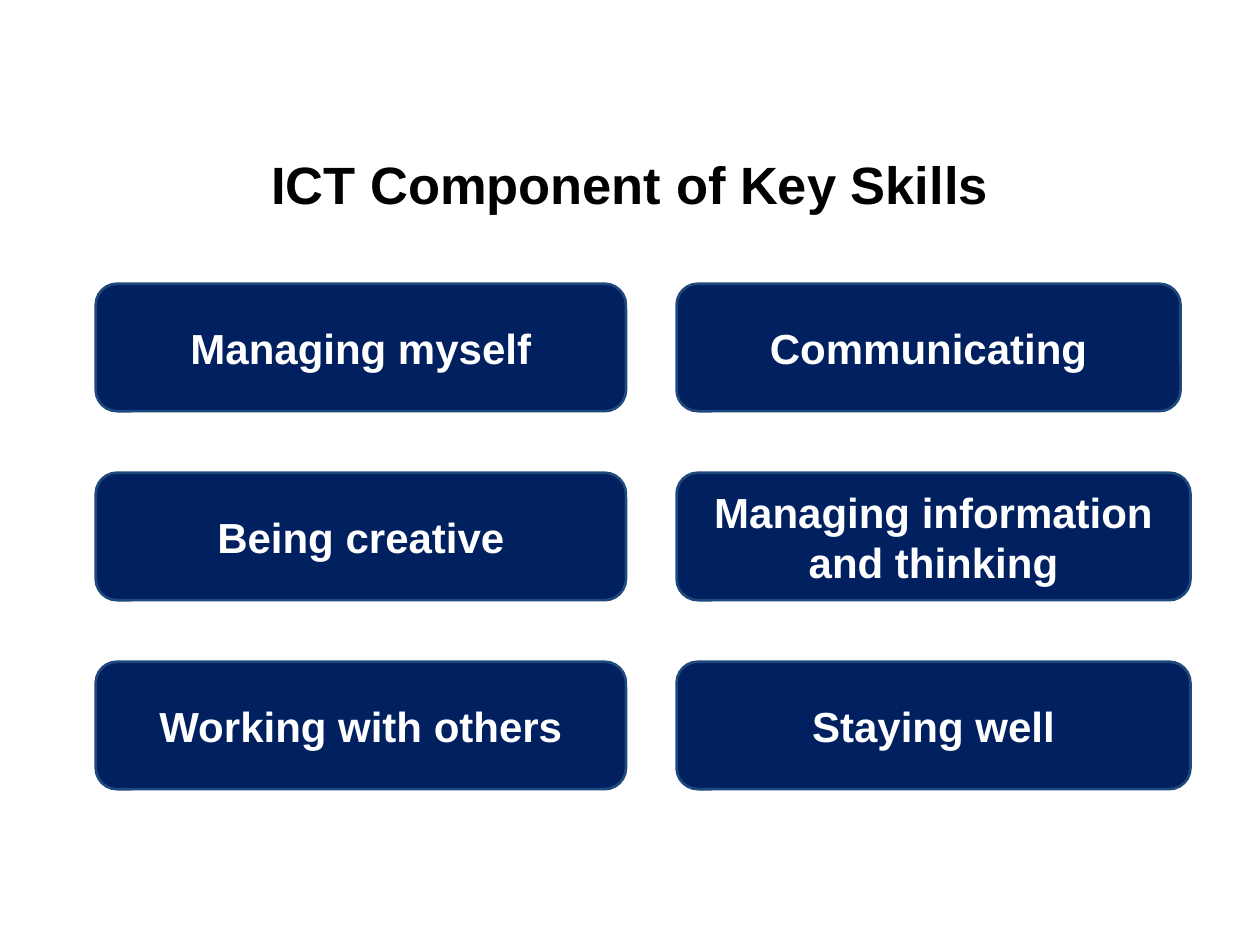
import pptx
import pptx.util
import pptx.dml.color
import pptx.enum.shapes
import pptx.enum.text
from pptx.util import Cm


def rgb(code):
    return pptx.dml.color.RGBColor.from_string(code)


class Deck:
    font = "Arial"
    ink, white, navy, edge = "000000", "FFFFFF", "002060", "1F497D"
    inset = Cm(0.25)

    def __init__(self, prs):
        self.s = prs.slides.add_slide(prs.slide_layouts[6])

    def label(self, sp, text, size, color):
        tf = sp.text_frame
        tf.word_wrap = True
        tf.vertical_anchor = pptx.enum.text.MSO_ANCHOR.MIDDLE
        tf.margin_left = tf.margin_right = self.inset
        tf.margin_top = tf.margin_bottom = self.inset
        p = tf.paragraphs[0]
        p.text = text
        p.alignment = pptx.enum.text.PP_ALIGN.CENTER
        p.font.name = self.font
        p.font.size = pptx.util.Pt(size)
        p.font.bold = True
        p.font.color.rgb = rgb(color)

    def title(self, text, x, y, w, h):
        sp = self.s.shapes.add_textbox(Cm(x), Cm(y), Cm(w), Cm(h))
        self.label(sp, text, 30, self.ink)

    def skill(self, text, x, y, w, h):
        sp = self.s.shapes.add_shape(
            pptx.enum.shapes.MSO_SHAPE.ROUNDED_RECTANGLE,
            Cm(x), Cm(y), Cm(w), Cm(h))
        sp.shadow.inherit = False
        sp.fill.solid()
        sp.fill.fore_color.rgb = rgb(self.navy)
        sp.line.color.rgb = rgb(self.edge)
        sp.line.width = pptx.util.Pt(1.5)
        self.label(sp, text, 24, self.white)


def main():
    prs = pptx.Presentation()
    prs.slide_width, prs.slide_height = Cm(25.4), Cm(19.05)
    deck = Deck(prs)

    # Title
    deck.title("ICT Component of Key Skills", 1.27, 2.11, 22.86, 3.18)

    # Two columns of skills; the first box on the right is slightly narrower
    left, right = 1.93, 13.64
    top, pitch, height = 5.72, 3.81, 2.57
    skills = [
        ("Managing myself", "Communicating", 10.16),
        ("Being creative", "Managing information and thinking", 10.36),
        ("Working with others", "Staying well", 10.36),
    ]
    for row, (first, second, width) in enumerate(skills):
        y = top + row * pitch
        deck.skill(first, left, y, 10.69, height)
        deck.skill(second, right, y, width, height)

    prs.save("out.pptx")


if __name__ == "__main__":
    main()
